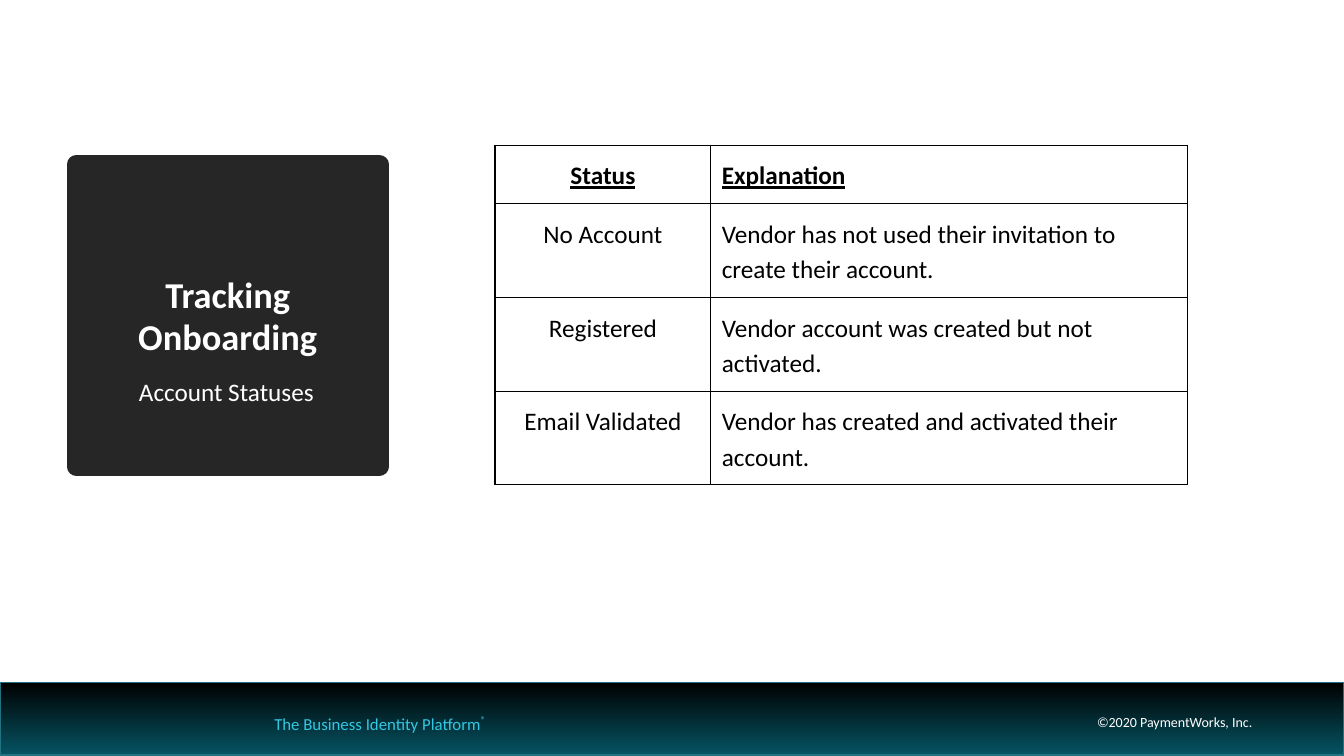
import pptx
import pptx.dml.color
import pptx.enum.shapes
import pptx.enum.text
import pptx.util
from lxml import etree
from pptx.oxml.ns import qn
from pptx.util import Inches, Pt

ALIGN = pptx.enum.text.PP_ALIGN
ANCHOR = pptx.enum.text.MSO_ANCHOR
FONT = "Calibri"
COLORS = {
    "white": "FFFFFF",
    "black": "000000",
    "card": "262626",
    "teal": "055463",
    "bar_edge": "217382",
    "tagline": "32C8E3",
}
STATUSES = [
    ("Status", "Explanation"),
    ("No Account", "Vendor has not used their invitation to create their account."),
    ("Registered", "Vendor account was created but not activated."),
    ("Email Validated", "Vendor has created and activated their account."),
]


def rgb(name):
    return pptx.dml.color.RGBColor.from_string(COLORS[name])


def add_run(paragraph, text, size, color, bold=False, underline=False):
    run = paragraph.add_run()
    run.text = text
    font = run.font
    font.name, font.size = FONT, Pt(size)
    font.bold, font.underline = bold, underline
    font.color.rgb = rgb(color)
    return run


def set_margins(target, margin):
    target.margin_left = target.margin_right = Inches(margin)
    target.margin_top = target.margin_bottom = Inches(margin)


def add_text_box(slide, left, top, width, height, margin=None, wrap=True):
    """Return the frame of a new text box; margin None keeps the usual insets."""
    box = slide.shapes.add_textbox(
        Inches(left), Inches(top), Inches(width), Inches(height))
    frame = box.text_frame
    frame.word_wrap = wrap
    if margin is not None:
        set_margins(frame, margin)
    return frame


def add_footer(slide, left, top, width, height):
    bar = slide.shapes.add_shape(
        pptx.enum.shapes.MSO_SHAPE.RECTANGLE,
        Inches(left), Inches(top), Inches(width), Inches(height))
    bar.shadow.inherit = False
    bar.fill.gradient()
    bar.fill.gradient_angle = 270
    for stop, color in zip(bar.fill.gradient_stops, ("black", "teal")):
        stop.color.rgb = rgb(color)
    bar.line.color.rgb = rgb("bar_edge")
    bar.line.width = Pt(1)

    text_top = top + 0.31
    tagline = add_text_box(slide, left + 2.72, text_top, 3.81, 0.2, margin=0)
    paragraph = tagline.paragraphs[0]
    add_run(paragraph, "The Business Identity Platform", 12, "tagline")
    mark = add_run(paragraph, "®", 12, "tagline")
    mark.font._element.set("baseline", "40000")

    notice = add_text_box(
        slide, left + width - 2.49, text_top, 1.58, 0.17, margin=0, wrap=False)
    paragraph = notice.paragraphs[0]
    paragraph.alignment = ALIGN.RIGHT
    add_run(paragraph, "©2020 PaymentWorks, Inc.", 10, "white")


def add_title_card(slide, left, top, size):
    """Dark square whose thick outline rounds its corners, with a subtitle."""
    title = slide.shapes.title
    title.left, title.top = Inches(left), Inches(top)
    title.width = title.height = Inches(size)
    title.fill.solid()
    title.fill.fore_color.rgb = rgb("card")
    title.line.color.rgb = rgb("card")
    title.line.width = Pt(13.75)
    etree.SubElement(title.line._get_or_add_ln(), qn("a:round"))
    frame = title.text_frame
    frame.word_wrap = True
    frame.auto_size = pptx.enum.text.MSO_AUTO_SIZE.NONE
    frame.vertical_anchor = ANCHOR.MIDDLE
    paragraph = frame.paragraphs[0]
    paragraph.alignment = ALIGN.CENTER
    paragraph.line_spacing = Pt(30)
    add_run(paragraph, "Tracking Onboarding", 26, "white", bold=True)

    subtitle = add_text_box(slide, left + 0.46, top + 2.09, 2.2, 0.59)
    paragraph = subtitle.paragraphs[0]
    paragraph._p.get_or_add_pPr().set("marL", str(Inches(0.06)))
    paragraph.line_spacing = 0.9
    paragraph.space_after = Pt(6)
    add_run(paragraph, "Account Statuses", 18, "white")


def add_borders(cell):
    properties = cell._tc.get_or_add_tcPr()
    for side in ("lnL", "lnR", "lnT", "lnB"):
        line = etree.SubElement(properties, qn(f"a:{side}"), w=str(Pt(1)))
        fill = etree.SubElement(line, qn("a:solidFill"))
        etree.SubElement(fill, qn("a:srgbClr"), val=COLORS["black"])


def add_status_table(slide, left, top, column_widths, row_heights):
    table = slide.shapes.add_table(
        len(row_heights), len(column_widths), Inches(left), Inches(top),
        Inches(sum(column_widths)), Inches(sum(row_heights))).table
    table.first_row = table.horz_banding = False
    for column, width in zip(table.columns, column_widths):
        column.width = Inches(width)
    for row, height in zip(table.rows, row_heights):
        row.height = Inches(height)
    for row_index, texts in enumerate(STATUSES):
        header = row_index == 0
        for column_index, text in enumerate(texts):
            cell = table.cell(row_index, column_index)
            set_margins(cell, 0.11)
            add_borders(cell)
            cell.fill.background()
            paragraph = cell.text_frame.paragraphs[0]
            paragraph.alignment = ALIGN.LEFT if column_index else ALIGN.CENTER
            paragraph.line_spacing = 1.15
            add_run(paragraph, text, 18, "black", bold=header, underline=header)


def main():
    presentation = pptx.Presentation()
    presentation.slide_width = Inches(13.33)
    presentation.slide_height = Inches(7.5)
    slide = presentation.slides.add_slide(presentation.slide_layouts[5])
    add_footer(slide, 0, 6.77, 13.33, 0.72)
    add_title_card(slide, 0.76, 1.63, 3)
    add_status_table(slide, 4.91, 1.44, [2.14, 4.73], [0.58] + [0.93] * 3)
    presentation.save("out.pptx")


if __name__ == "__main__":
    main()
